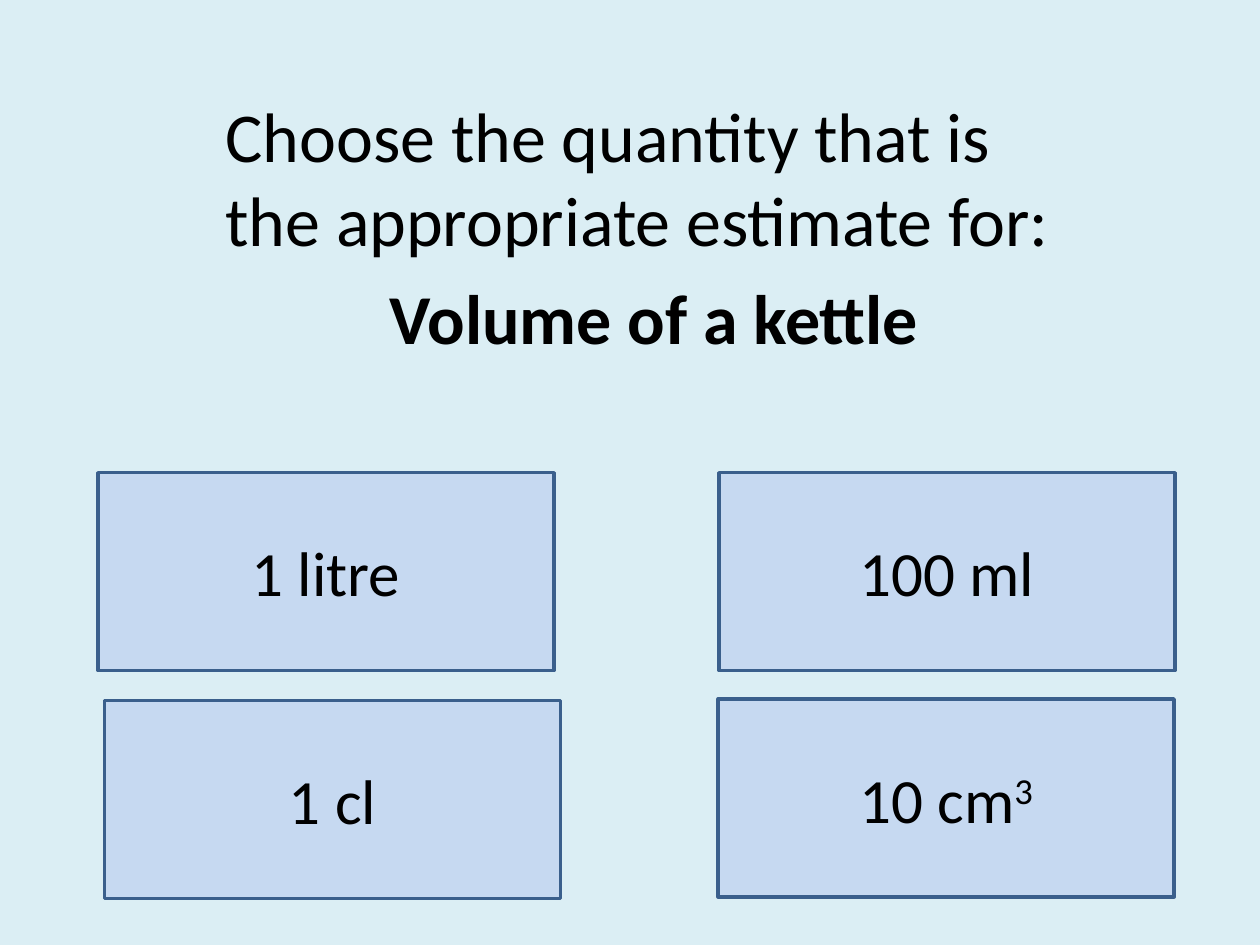
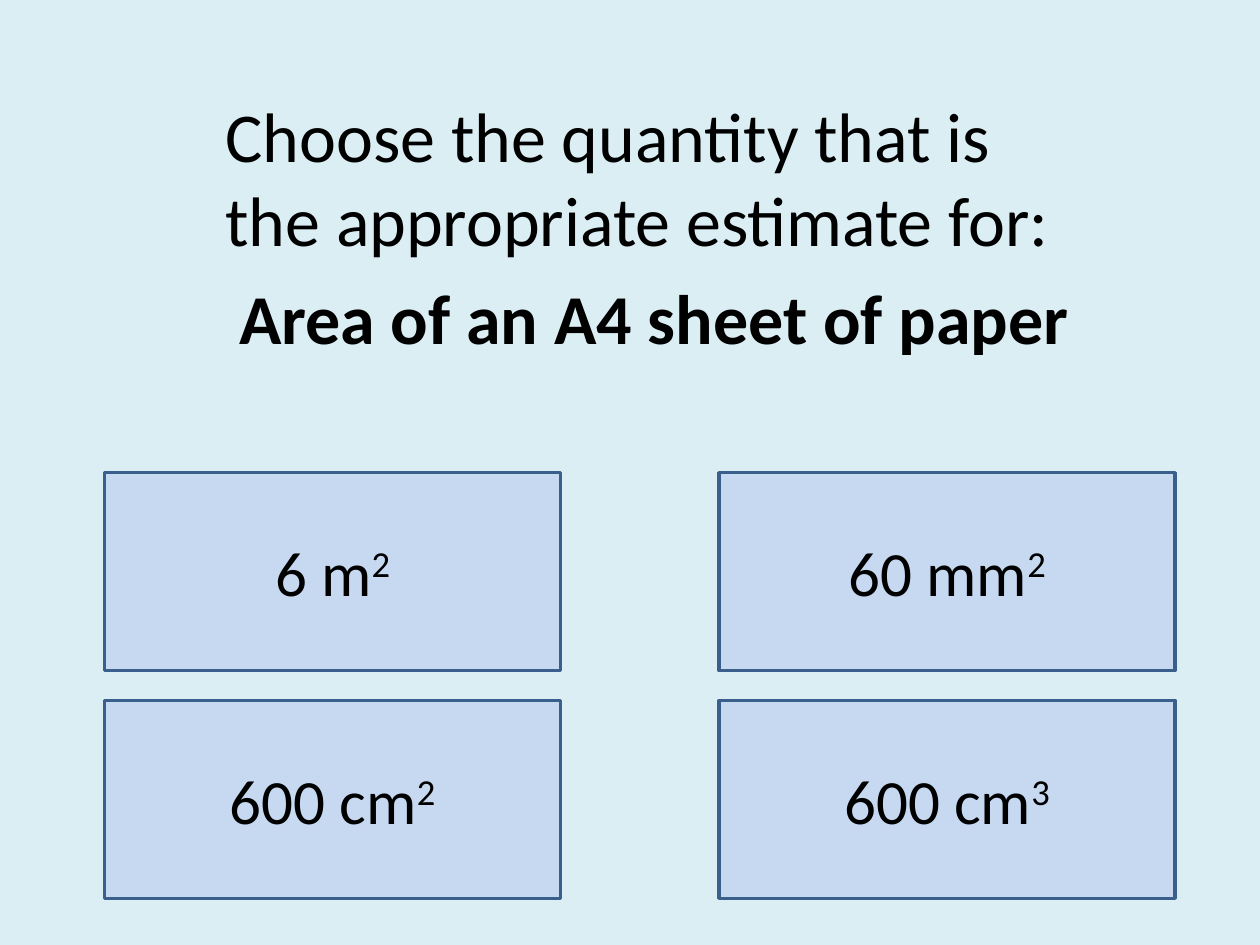
from dataclasses import dataclass

import pptx
import pptx.dml.color
import pptx.enum.shapes
import pptx.enum.text
import pptx.presentation
import pptx.slide
import pptx.text.text
import pptx.util

Cm = pptx.util.Cm
Pt = pptx.util.Pt
RGBColor = pptx.dml.color.RGBColor
Align = pptx.enum.text.PP_ALIGN
Anchor = pptx.enum.text.MSO_ANCHOR


@dataclass(frozen=True)
class Theme:
    font: str = "Calibri"
    background: RGBColor = RGBColor(0xDB, 0xEE, 0xF4)
    card_fill: RGBColor = RGBColor(0xC6, 0xD9, 0xF1)
    card_line: RGBColor = RGBColor(0x3A, 0x5F, 0x8C)
    text: RGBColor = RGBColor(0, 0, 0)
    question_size: int = 40
    answer_size: int = 36
    line_width: int = 2


@dataclass(frozen=True)
class Answer:
    """One answer card; the shifts move it off the grid, in centimetres."""
    text: str
    power: str = ""
    shift_x: float = 0
    shift_y: float = 0


@dataclass(frozen=True)
class Question:
    """A quantity to estimate, with its answers listed row by row."""
    quantity: str
    answers: tuple[Answer, ...]


THEME = Theme()
PROMPT = "Choose the quantity that is the appropriate estimate for:"

CARD_WIDTH, CARD_HEIGHT = 9.19, 3.99
GRID_LEFT, GRID_TOP = 2.11, 9.53
COLUMN_STEP, ROW_STEP = 12.39, 4.59
COLUMNS = 2

QUESTIONS = (
    Question("Volume of a kettle", (
        Answer("1 litre", shift_x=-0.13),
        Answer("100 ml"),
        Answer("1 cl"),
        Answer("10 cm", "3", shift_x=-0.02, shift_y=-0.03),
    )),
    Question("Area of an A4 sheet of paper", (
        Answer("6 m", "2"),
        Answer("60 mm", "2"),
        Answer("600 cm", "2"),
        Answer("600 cm", "3"),
    )),
)


def add_text(paragraph: pptx.text.text._Paragraph, text: str, *, size: int,
             align: Align = Align.CENTER, bold: bool = False,
             superscript: bool = False, space_before: float = 0) -> None:
    paragraph.alignment = align
    paragraph.space_before = Pt(space_before)
    run = paragraph.add_run()
    run.text = text
    run.font.name = THEME.font
    run.font.size = Pt(size)
    run.font.bold = bold
    run.font.color.rgb = THEME.text
    if superscript:
        run._r.get_or_add_rPr().set("baseline", "30000")


def add_question_title(slide: pptx.slide.Slide, quantity: str) -> None:
    title = slide.shapes.title
    title.left, title.top = Cm(4.29), Cm(1.73)
    title.width, title.height = Cm(17.78), Cm(6.22)
    frame = title.text_frame
    frame.word_wrap = True
    frame.auto_size = pptx.enum.text.MSO_AUTO_SIZE.NONE
    frame.vertical_anchor = Anchor.TOP
    size = THEME.question_size
    gap = size * 0.2
    add_text(frame.paragraphs[0], PROMPT, size=size, align=Align.LEFT,
             space_before=gap)
    add_text(frame.add_paragraph(), quantity, size=size, bold=True,
             space_before=gap)


def add_answer_card(slide: pptx.slide.Slide, answer: Answer, position: int) -> None:
    row, column = divmod(position, COLUMNS)
    card = slide.shapes.add_shape(
        pptx.enum.shapes.MSO_SHAPE.RECTANGLE,
        Cm(GRID_LEFT + column * COLUMN_STEP + answer.shift_x),
        Cm(GRID_TOP + row * ROW_STEP + answer.shift_y),
        Cm(CARD_WIDTH), Cm(CARD_HEIGHT))
    card.shadow.inherit = False
    card.fill.solid()
    card.fill.fore_color.rgb = THEME.card_fill
    card.line.color.rgb = THEME.card_line
    card.line.width = Pt(THEME.line_width)
    card.text_frame.vertical_anchor = Anchor.MIDDLE
    paragraph = card.text_frame.paragraphs[0]
    add_text(paragraph, answer.text, size=THEME.answer_size)
    if answer.power:
        add_text(paragraph, answer.power, size=THEME.answer_size, superscript=True)


def add_question_slide(presentation: pptx.presentation.Presentation,
                       question: Question) -> None:
    layout = presentation.slide_layouts.get_by_name("Title Only")
    slide = presentation.slides.add_slide(layout)
    add_question_title(slide, question.quantity)
    for position, answer in enumerate(question.answers):
        add_answer_card(slide, answer, position)


def main() -> None:
    presentation = pptx.Presentation()
    presentation.slide_width = Cm(25.4)
    presentation.slide_height = Cm(19.05)
    background = presentation.slide_master.background.fill
    background.solid()
    background.fore_color.rgb = THEME.background
    for question in QUESTIONS:
        add_question_slide(presentation, question)
    presentation.save("out.pptx")


if __name__ == "__main__":
    main()
